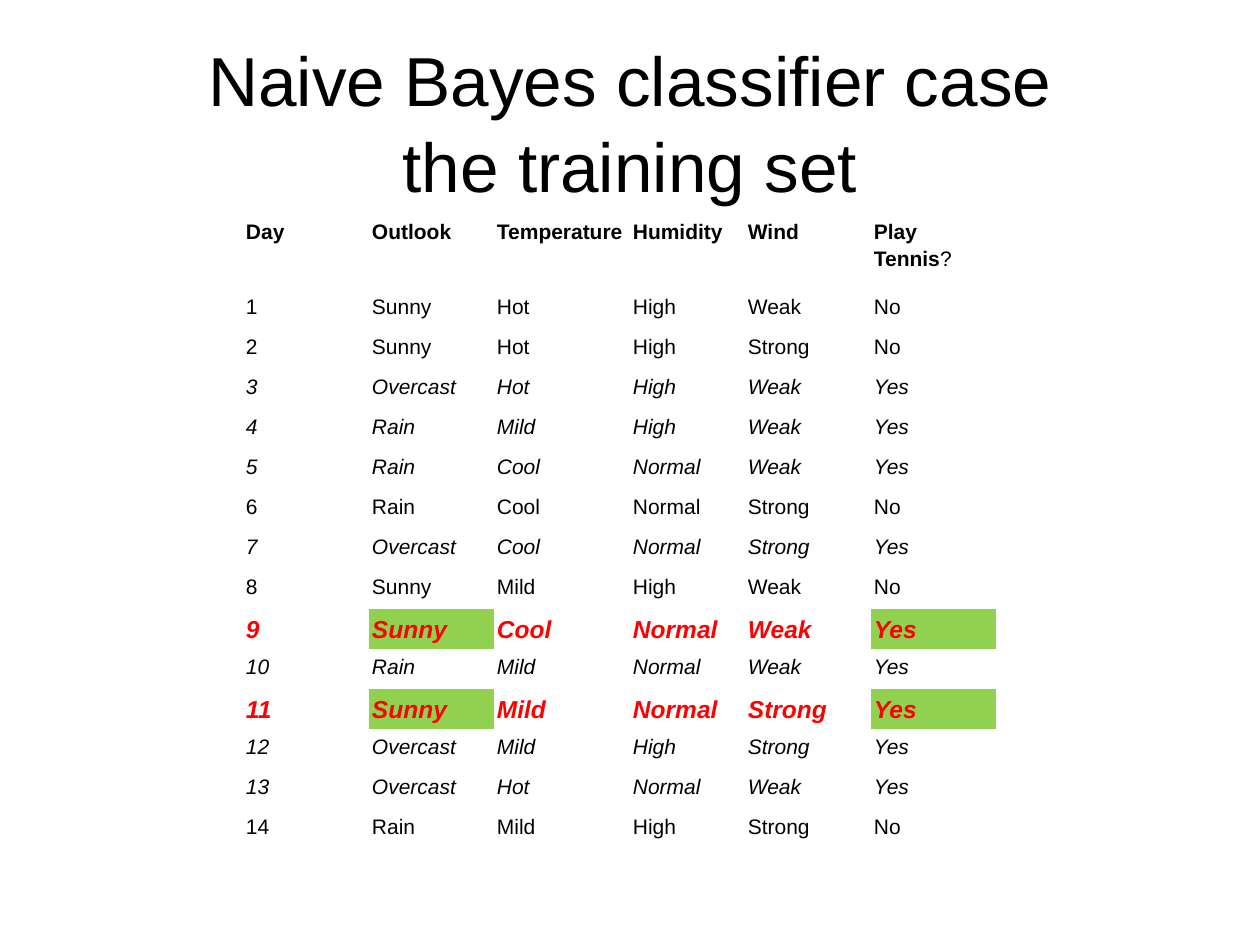
from pptx import Presentation
from pptx.dml.color import RGBColor as Rgb
from pptx.enum.text import MSO_ANCHOR as Anchor, PP_ALIGN as Align
from pptx.util import Pt

PX = 914400 / 126
FONT = "Arial"
COLORS = {"text": "000000", "accent": "FF0000", "highlight": "92D050"}
NO_STYLE = "{2D5ABB26-0587-4C30-8999-92F81FD0307C}"
TITLE_LINES = ["Naive Bayes classifier case", "the training set"]
HEADERS = ["Day", "Outlook", "Temperature", "Humidity", "Wind", "Play Tennis"]
COLUMN_WIDTHS = [126, 125, 136, 115, 126, 125]
HEADER_HEIGHT, ROW_HEIGHT = 75, 40
EMPHASIZED_DAYS = {9, 11}
HIGHLIGHTED_COLUMNS = {HEADERS.index("Outlook"), HEADERS.index("Play Tennis")}
TRAINING_SET = [
    ("Sunny", "Hot", "High", "Weak", "No"),
    ("Sunny", "Hot", "High", "Strong", "No"),
    ("Overcast", "Hot", "High", "Weak", "Yes"),
    ("Rain", "Mild", "High", "Weak", "Yes"),
    ("Rain", "Cool", "Normal", "Weak", "Yes"),
    ("Rain", "Cool", "Normal", "Strong", "No"),
    ("Overcast", "Cool", "Normal", "Strong", "Yes"),
    ("Sunny", "Mild", "High", "Weak", "No"),
    ("Sunny", "Cool", "Normal", "Weak", "Yes"),
    ("Rain", "Mild", "Normal", "Weak", "Yes"),
    ("Sunny", "Mild", "Normal", "Strong", "Yes"),
    ("Overcast", "Mild", "High", "Strong", "Yes"),
    ("Overcast", "Hot", "Normal", "Weak", "Yes"),
    ("Rain", "Mild", "High", "Strong", "No"),
]


def px(length):
    """Turn pixels into EMU."""
    return round(length * PX)


def add_span(para, text, size, color="text", bold=False, italic=False):
    """Add one formatted run to a paragraph."""
    span = para.add_run()
    span.text = text
    span.font.name = FONT
    span.font.size = Pt(size)
    span.font.bold = bold
    span.font.italic = italic
    span.font.color.rgb = Rgb.from_string(COLORS[color])


def add_title(page, left, top, width, height):
    """Place the centred two-line title."""
    box = page.shapes.add_textbox(px(left), px(top), px(width), px(height))
    frame = box.text_frame
    frame.word_wrap = True
    frame.vertical_anchor = Anchor.MIDDLE
    frame.margin_top, frame.margin_bottom = px(6), 0
    para = frame.paragraphs[0]
    para.alignment = Align.CENTER
    para.line_spacing = 1.04
    for index, line in enumerate(TITLE_LINES):
        if index:
            para.add_line_break()
        add_span(para, line, 39.6)


def prepare_cell(cell, fill=None):
    """Set margins and fill of a cell and return its paragraph."""
    cell.margin_left = cell.margin_right = px(3)
    cell.margin_top = cell.margin_bottom = px(3)
    cell.vertical_anchor = Anchor.TOP
    if fill:
        cell.fill.solid()
        cell.fill.fore_color.rgb = Rgb.from_string(COLORS[fill])
    else:
        cell.fill.background()
    para = cell.text_frame.paragraphs[0]
    para.line_spacing = 1.15
    return para


def add_training_table(page, left, top):
    """Place the table of days, with the emphasized days in colour."""
    height = HEADER_HEIGHT + ROW_HEIGHT * len(TRAINING_SET)
    table = page.shapes.add_table(
        len(TRAINING_SET) + 1, len(HEADERS),
        px(left), px(top), px(sum(COLUMN_WIDTHS)), px(height),
    ).table
    table.first_row = table.horz_banding = False
    table._tbl.tblPr[0].text = NO_STYLE
    for column, width in zip(table.columns, COLUMN_WIDTHS):
        column.width = px(width)
    for index, row in enumerate(table.rows):
        row.height = px(ROW_HEIGHT if index else HEADER_HEIGHT)

    for column, header in enumerate(HEADERS):
        para = prepare_cell(table.cell(0, column))
        add_span(para, header, 12, bold=True)
    add_span(para, "?", 12)

    for day, values in enumerate(TRAINING_SET, 1):
        strong = day in EMPHASIZED_DAYS
        style = {
            "size": 14 if strong else 12,
            "color": "accent" if strong else "text",
            "bold": strong,
            "italic": values[-1] == "Yes",
        }
        for column, value in enumerate((str(day), *values)):
            marked = strong and column in HIGHLIGHTED_COLUMNS
            para = prepare_cell(table.cell(day, column), "highlight" if marked else None)
            add_span(para, value, **style)


def main():
    """Build and save the deck."""
    deck = Presentation()
    deck.slide_width, deck.slide_height = px(1260), px(945)
    page = deck.slides.add_slide(deck.slide_layouts[6])
    add_title(page, 63, 38, 1134, 158)
    add_training_table(page, 243, 214)
    deck.save("out.pptx")


if __name__ == "__main__":
    main()
